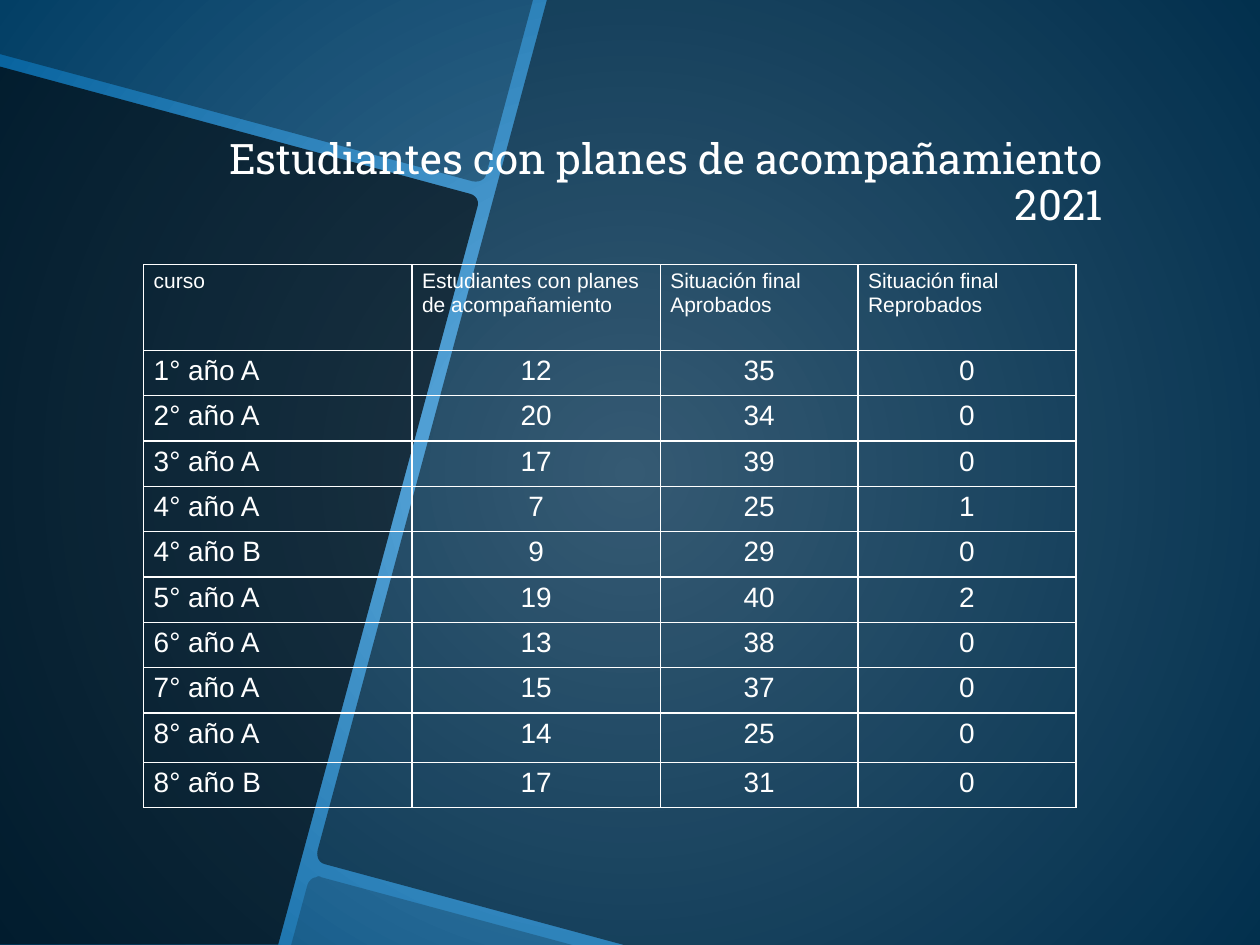
import math

import lxml.etree
import pptx
import pptx.dml.color
import pptx.enum.text
import pptx.oxml.ns
import pptx.util

Inches = pptx.util.Inches
Pt = pptx.util.Pt
RGB = pptx.dml.color.RGBColor.from_string
ALIGN = pptx.enum.text.PP_ALIGN
qn = pptx.oxml.ns.qn


class Theme:
    """Colours, fonts and type sizes of the slide."""
    text = "FFFFFF"
    panel = "000000"
    glow = ("6BB5E7", "05619C")
    title_font = "Roboto Slab"
    body_font = "Arial"
    title_size = 24
    header_size = 12
    body_size = 16
    border = 0.75
    tilt = 15.1


PANELS = [
    (70, (1.02, 4.3), [(0, 0.53), (3.73, 1.54), (3.78, 1.55, 3.81, 1.6, 3.79, 1.65),
                       (2.21, 7.5), (0, 7.5)]),
    (35, (2.06, 0.2), [(0, 0), (4.23, 0), (3.86, 1.38),
                       (3.85, 1.43, 3.8, 1.45, 3.75, 1.44), (0, 0.43)]),
    (20, (3.44, 7.5), [(2.51, 6.96), (2.52, 6.95, 2.54, 6.95, 2.55, 6.96), (4.55, 7.5),
                       (2.31, 7.5), (2.44, 7.02), (2.45, 6.99, 2.48, 6.96, 2.51, 6.96)]),
    (50, (7.19, 3.67), [(4.34, 0), (10, 0), (10, 7.5), (4.95, 7.5), (2.58, 6.86),
                        (2.53, 6.85, 2.51, 6.8, 2.52, 6.75)]),
]
HEADER = ["curso", "Estudiantes con planes de acompañamiento",
          "Situación final\nAprobados", "Situación final\nReprobados"]
COURSES = [
    ("1° año A", 12, 35, 0),
    ("2° año A", 20, 34, 0),
    ("3° año A", 17, 39, 0),
    ("4° año A", 7, 25, 1),
    ("4° año B", 9, 29, 0),
    ("5° año A", 19, 40, 2),
    ("6° año A", 13, 38, 0),
    ("7° año A", 15, 37, 0),
    ("8° año A", 14, 25, 0),
    ("8° año B", 17, 31, 0),
]
COLUMN_WIDTHS = [2.13, 1.97, 1.57, 1.73]
ROW_HEIGHTS = [0.68] + [0.36] * 8 + [0.39, 0.36]


def flatten(outline, steps=6):
    """Turn corners and cubic curves into a list of points."""
    points = []
    for item in outline:
        if len(item) == 2:
            points.append(item)
            continue
        nodes = [points[-1], item[:2], item[2:4], item[4:]]
        for i in range(1, steps + 1):
            t = i / steps
            weights = [(1 - t) ** 3, 3 * t * (1 - t) ** 2, 3 * t * t * (1 - t), t ** 3]
            points.append(tuple(sum(w * n[axis] for w, n in zip(weights, nodes))
                                for axis in (0, 1)))
    return points


def turn(point, center, degrees):
    """Rotate a point around a center."""
    a = math.radians(degrees)
    x, y = point[0] - center[0], point[1] - center[1]
    return (center[0] + x * math.cos(a) - y * math.sin(a),
            center[1] + x * math.sin(a) + y * math.cos(a))


class SlideBuilder:
    """Draws styled elements on the current slide."""

    def __init__(self, slide, theme):
        self.slide = slide
        self.theme = theme

    def background(self):
        """Fill the slide with a glow from its center."""
        fill = self.slide.background.fill
        fill.gradient()
        for stop, color, position in zip(fill.gradient_stops, self.theme.glow, (0, 1)):
            stop.color.rgb = RGB(color)
            stop.position = position
        grad = self.slide.element.find(".//" + qn("a:gradFill"))
        grad.remove(grad.find(qn("a:lin")))
        glow = lxml.etree.SubElement(grad, qn("a:path"), path="circle")
        lxml.etree.SubElement(glow, qn("a:fillToRect"),
                              {side: "50000" for side in "ltrb"})

    def panel(self, opacity, center, outline):
        """Draw a tilted translucent panel."""
        points = [turn(p, center, -self.theme.tilt) for p in flatten(outline)]
        start, *rest = [(Inches(x), Inches(y)) for x, y in points]
        builder = self.slide.shapes.build_freeform(*start)
        builder.add_line_segments(rest, close=True)
        sp = builder.convert_to_shape()
        sp.rotation = self.theme.tilt
        sp.shadow.inherit = False
        sp.line.fill.background()
        sp.fill.solid()
        sp.fill.fore_color.rgb = RGB(self.theme.panel)
        color = sp.fill._xPr.find(".//" + qn("a:srgbClr"))
        lxml.etree.SubElement(color, qn("a:alpha"), val=str(opacity * 1000))

    def font(self, p, name, size):
        """Set the font of a paragraph."""
        p.font.name = name
        p.font.size = Pt(size)
        p.font.color.rgb = RGB(self.theme.text)

    def title(self, text, left, top, width, height):
        """Add the right-aligned title."""
        sp = self.slide.shapes.add_textbox(Inches(left), Inches(top),
                                           Inches(width), Inches(height))
        tf = sp.text_frame
        tf.word_wrap = True
        tf.vertical_anchor = pptx.enum.text.MSO_ANCHOR.BOTTOM
        tf.margin_left = tf.margin_right = Inches(0.07)
        tf.margin_top = tf.margin_bottom = Inches(0.04)
        p = tf.paragraphs[0]
        p.text = text
        p.alignment = ALIGN.RIGHT
        p.line_spacing = 0.9
        self.font(p, self.theme.title_font, self.theme.title_size)

    def cell(self, cell, text, size, align):
        """Fill in and outline one table cell."""
        cell.margin_left = cell.margin_right = Inches(0.08)
        cell.margin_top = cell.margin_bottom = Inches(0.04)
        cell.text = text
        for p in cell.text_frame.paragraphs:
            p.alignment = align
            self.font(p, self.theme.body_font, size)
        cell.fill.background()
        props = cell._tc.get_or_add_tcPr()
        for i, side in enumerate("LRTB"):
            ln = lxml.etree.Element(qn("a:ln" + side), w=str(Pt(self.theme.border)))
            solid = lxml.etree.SubElement(ln, qn("a:solidFill"))
            lxml.etree.SubElement(solid, qn("a:srgbClr"), val=self.theme.text)
            props.insert(i, ln)

    def table(self, rows, left, top, widths, heights):
        """Add the outlined table with a small header row."""
        table = self.slide.shapes.add_table(
            len(rows), len(widths), Inches(left), Inches(top),
            Inches(sum(widths)), Inches(sum(heights))).table
        table.first_row = table.horz_banding = False
        for column, width in zip(table.columns, widths):
            column.width = Inches(width)
        for r, (values, height) in enumerate(zip(rows, heights)):
            table.rows[r].height = Inches(height)
            size = self.theme.body_size if r else self.theme.header_size
            for c, value in enumerate(values):
                align = ALIGN.CENTER if r and c else ALIGN.LEFT
                self.cell(table.cell(r, c), str(value), size, align)


def main():
    """Build and save the slide."""
    prs = pptx.Presentation()
    prs.slide_width, prs.slide_height = Inches(10), Inches(7.5)
    s = SlideBuilder(prs.slides.add_slide(prs.slide_layouts[6]), Theme)
    s.background()
    for panel in PANELS:
        s.panel(*panel)
    s.title("Estudiantes con planes de acompañamiento 2021", 1.14, 0.92, 7.68, 0.94)
    s.table([HEADER] + COURSES, 1.14, 2.1, COLUMN_WIDTHS, ROW_HEIGHTS)
    prs.save("out.pptx")


if __name__ == "__main__":
    main()
